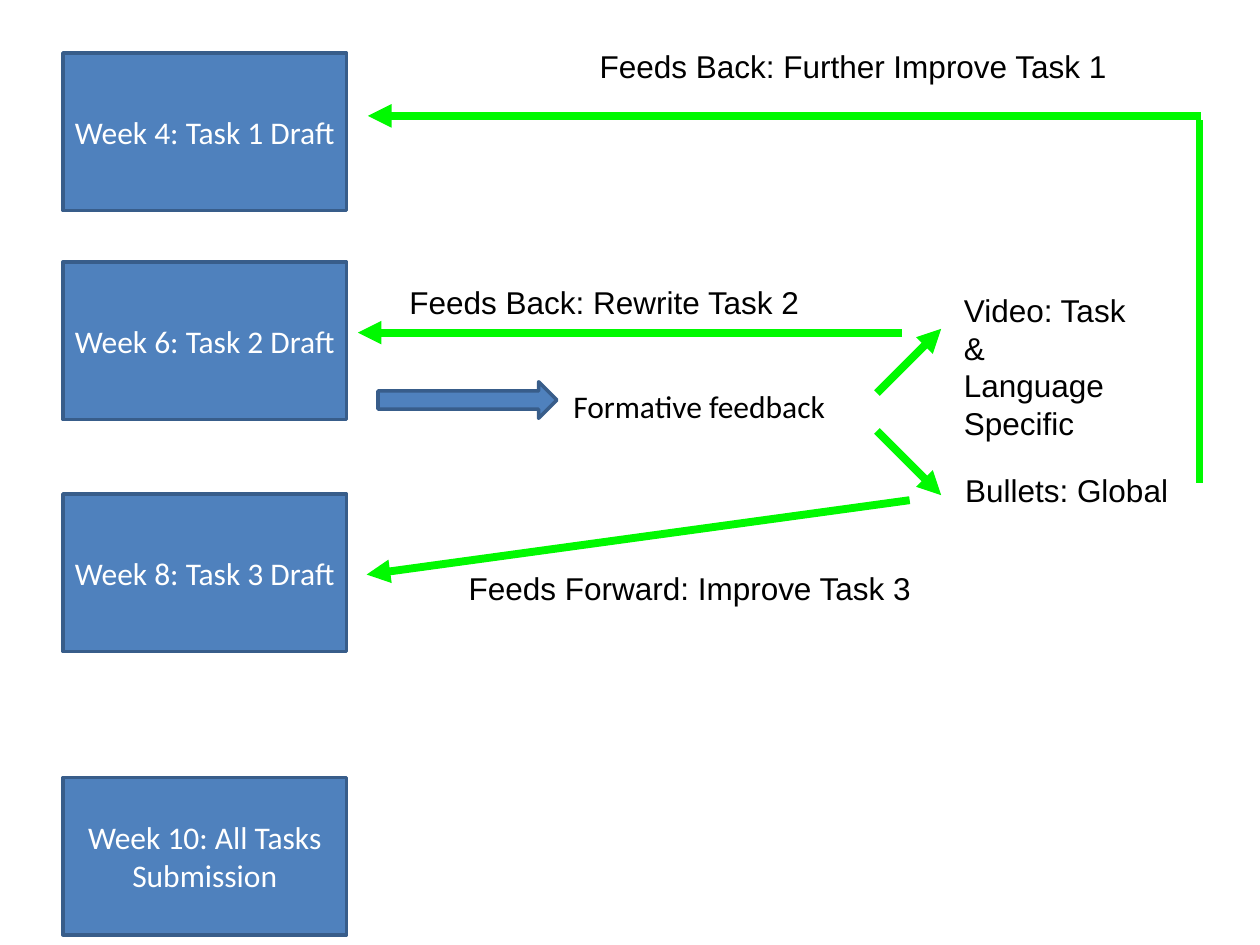
from lxml.etree import SubElement
from pptx import Presentation
from pptx.dml.color import RGBColor
from pptx.enum.shapes import MSO_CONNECTOR, MSO_SHAPE
from pptx.enum.text import MSO_ANCHOR, PP_ALIGN
from pptx.oxml.ns import qn
from pptx.util import Inches, Pt

COLORS = {"box": "4F81BD", "edge": "385D8A", "flow": "00F900",
          "light": "FFFFFF", "dark": "000000"}

WEEKS = [
    ("Week 4: Task 1 Draft", 0.42),
    ("Week 6: Task 2 Draft", 2.08),
    ("Week 8: Task 3 Draft", 3.92),
    ("Week 10: All Tasks Submission", 6.17),
]
LABELS = [
    (["Formative feedback"], "Calibri", True, (4.5, 3.02, 2.5, 0.39)),
    (["Video: Task &", "Language", "Specific"], "Arial", False, (7.6, 2.26, 1.6, 0.97)),
    (["Bullets: Global"], "Arial", False, (7.61, 3.69, 1.73, 0.38)),
    (["Feeds Back: Rewrite Task 2"], "Arial", True, (3.2, 2.2, 3.86, 0.38)),
    (["Feeds Forward: Improve Task 3"], "Arial", True, (3.67, 4.47, 4.32, 0.38)),
    (["Feeds Back: Further Improve Task 1"], "Arial", False, (4.71, 0.32, 4.14, 0.38)),
]
FLOWS = [
    ((6.96, 3.12), (7.47, 2.61), True),
    ((6.96, 3.42), (7.47, 3.93), True),
    ((7.16, 2.64), (2.84, 2.64), True),
    ((7.22, 3.97), (2.91, 4.56), True),
    ((9.53, 0.92), (2.92, 0.92), True),
    ((9.52, 3.83), (9.52, 0.95), False),
]


def color(name):
    return RGBColor.from_string(COLORS[name])


def write(shape, lines, face, ink, inset, align, anchor, wrap=True):
    frame = shape.text_frame
    formats = {"word_wrap": wrap, "vertical_anchor": anchor}
    for side in ("left", "top", "right", "bottom"):
        formats[f"margin_{side}"] = Inches(inset)
    for name, value in formats.items():
        setattr(frame, name, value)
    frame.text = "\n".join(lines)
    for para in frame.paragraphs:
        para.alignment = align
        for name, value in {"name": face, "size": Pt(18)}.items():
            setattr(para.font, name, value)
        para.font.color.rgb = color(ink)


def add_block(slide, kind, place):
    shape = slide.shapes.add_shape(kind, *map(Inches, place))
    shape.shadow.inherit = False
    shape.fill.solid()
    shape.fill.fore_color.rgb = color("box")
    shape.line.color.rgb = color("edge")
    shape.line.width = Pt(2)
    return shape


def add_flow(slide, start, end, head):
    flow = slide.shapes.add_connector(
        MSO_CONNECTOR.STRAIGHT, *map(Inches, start + end))
    flow.line.color.rgb = color("flow")
    flow.line.width = Pt(4.5)
    if head:
        SubElement(flow.line._get_or_add_ln(), qn("a:tailEnd"), type="triangle")
    SubElement(flow._element.spPr, qn("a:effectLst"))


def main():
    deck = Presentation()
    deck.slide_width, deck.slide_height = Inches(10), Inches(7.5)
    slide = deck.slides.add_slide(deck.slide_layouts[6])
    for text, top in WEEKS:
        box = add_block(slide, MSO_SHAPE.RECTANGLE, (0.5, top, 2.25, 1.25))
        write(box, [text], "Calibri", "light", 0, PP_ALIGN.CENTER, MSO_ANCHOR.MIDDLE)
    add_block(slide, MSO_SHAPE.RIGHT_ARROW, (3, 3.03, 1.42, 0.29))
    for start, end, head in FLOWS:
        add_flow(slide, start, end, head)
    for lines, face, wrap, place in LABELS:
        label = slide.shapes.add_textbox(*map(Inches, place))
        write(label, lines, face, "dark", 0.05, PP_ALIGN.LEFT, MSO_ANCHOR.TOP, wrap)
    deck.save("out.pptx")


if __name__ == "__main__":
    main()
